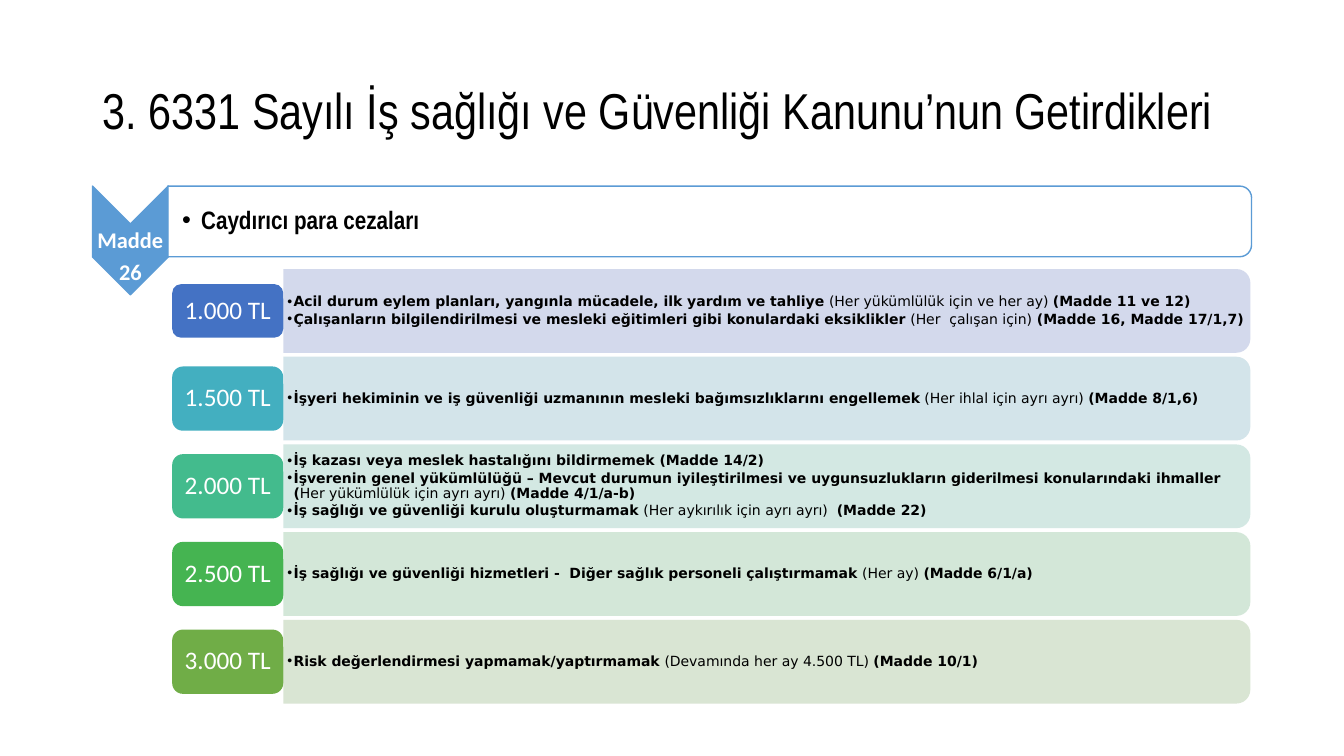
import pptx
import pptx.util
import pptx.dml.color
import pptx.enum.shapes
import pptx.enum.text
import pptx.oxml.ns
import lxml.etree

Cm, Pt = pptx.util.Cm, pptx.util.Pt
RGBColor = pptx.dml.color.RGBColor
SHAPE = pptx.enum.shapes.MSO_SHAPE
ALIGN = pptx.enum.text.PP_ALIGN
MIDDLE = pptx.enum.text.MSO_ANCHOR.MIDDLE
qn = pptx.oxml.ns.qn

# Colours
BLACK = RGBColor(0x00, 0x00, 0x00)
WHITE = RGBColor(0xFF, 0xFF, 0xFF)
BLUE = RGBColor(0x5B, 0x9B, 0xD5)
INDIGO, INDIGO_TINT = RGBColor(0x44, 0x72, 0xC4), RGBColor(0xCF, 0xD5, 0xEA)
TEAL, TEAL_TINT = RGBColor(0x43, 0xAF, 0xC0), RGBColor(0xCF, 0xE2, 0xE8)
MINT, MINT_TINT = RGBColor(0x43, 0xBB, 0x8D), RGBColor(0xCF, 0xE6, 0xE0)
GREEN, GREEN_TINT = RGBColor(0x45, 0xB4, 0x51), RGBColor(0xCF, 0xE5, 0xD4)
OLIVE, OLIVE_TINT = RGBColor(0x70, 0xAD, 0x47), RGBColor(0xD5, 0xE3, 0xCF)

# Content
TITLE = "3. 6331 Sayılı İş sağlığı ve Güvenliği Kanunu’nun Getirdikleri"
ARTICLE = ["Madde", "26"]
HEADING = "Caydırıcı para cezaları"

# Fine, chip colour, bar colour, chip height in cm, bullets;
# the runs of a bullet alternate between bold and regular
FINES = [
    ("1.000 TL", INDIGO, INDIGO_TINT, 1.35, [
        ["Acil durum eylem planları, yangınla mücadele, ilk yardım ve tahliye ",
         "(Her yükümlülük için ve her ay) ", "(Madde 11 ve 12)"],
        ["Çalışanların bilgilendirilmesi ve mesleki eğitimleri gibi konulardaki eksiklikler ",
         "(Her  çalışan için)", " (Madde 16, Madde 17/1,7)"]]),
    ("1.500 TL", TEAL, TEAL_TINT, 1.62, [
        ["İşyeri hekiminin ve iş güvenliği uzmanının mesleki bağımsızlıklarını engellemek",
         " (Her ihlal için ayrı ayrı) ", "(Madde 8/1,6)"]]),
    ("2.000 TL", MINT, MINT_TINT, 1.62, [
        ["İş kazası veya meslek hastalığını bildirmemek (Madde 14/2)"],
        ["İşverenin genel yükümlülüğü – Mevcut durumun iyileştirilmesi ve "
         "uygunsuzlukların giderilmesi konularındaki ihmaller (",
         "Her yükümlülük için ayrı ayrı) ", "(Madde 4/1/a-b)"],
        ["İş sağlığı ve güvenliği kurulu oluşturmamak ",
         "(Her aykırılık için ayrı ayrı)  ", "(Madde 22)"]]),
    ("2.500 TL", GREEN, GREEN_TINT, 1.62, [
        ["İş sağlığı ve güvenliği hizmetleri -  Diğer sağlık personeli çalıştırmamak ",
         "(Her ay) ", "(Madde 6/1/a)"]]),
    ("3.000 TL", OLIVE, OLIVE_TINT, 1.62, [
        ["Risk değerlendirmesi yapmamak/yaptırmamak ",
         "(Devamında her ay 4.500 TL) ", "(Madde 10/1)"]]),
]

# Layout in cm
ROW_TOP, ROW_PITCH, ROW_H = 6.78, 2.21, 2.11
CHIP_X, CHIP_W = 4.34, 2.8
BAR_X, BAR_W = CHIP_X + CHIP_W, 24.37
HEAD_X, HEAD_Y, HEAD_W, HEAD_H = 4.23, 4.69, 27.31, 1.78


def add_shape(kind, x, y, w, h, fill, line=None, quarter_turn=False, alpha=None):
    """Place a shape so that it shows at x, y, w, h, even when turned by 90°."""
    if quarter_turn:
        x, y, w, h = x + (w - h) / 2, y + (h - w) / 2, h, w
    sp = slide.shapes.add_shape(kind, Cm(x), Cm(y), Cm(w), Cm(h))
    sp.rotation = 90 if quarter_turn else 0
    sp.shadow.inherit = False
    sp.fill.solid()
    sp.fill.fore_color.rgb = fill
    if alpha:
        colour = sp.fill._xPr.find(qn("a:solidFill"))[0]
        lxml.etree.SubElement(colour, qn("a:alpha")).set("val", str(alpha * 1000))
    if line is None:
        sp.line.fill.background()
    else:
        sp.line.color.rgb = line
        sp.line.width = Pt(1)
    return sp


def set_frame(sp, side=0.0, edge=0.0):
    tf = sp.text_frame
    tf.word_wrap = True
    tf.vertical_anchor = MIDDLE
    tf.margin_left = tf.margin_right = Cm(side)
    tf.margin_top = tf.margin_bottom = Cm(edge)
    return tf


def add_text_box(x, y, w, h, side=0.0, edge=0.0):
    return set_frame(slide.shapes.add_textbox(Cm(x), Cm(y), Cm(w), Cm(h)), side, edge)


def add_paragraph(tf, first, runs, size, font, color, align=ALIGN.LEFT, bold=False):
    p = tf.paragraphs[0] if first else tf.add_paragraph()
    p.alignment = align
    p.line_spacing = 0.9
    for i, text in enumerate(runs):
        r = p.add_run()
        r.text = text
        r.font.size, r.font.name = Pt(size), font
        r.font.bold = bold and i % 2 == 0
        r.font.color.rgb = color
    return p


def add_bullet(p, indent):
    pPr = p._p.get_or_add_pPr()
    pPr.set("marL", str(Cm(indent)))
    pPr.set("indent", str(-Cm(indent)))
    lxml.etree.SubElement(pPr, qn("a:buFont")).set("typeface", "Arial")
    lxml.etree.SubElement(pPr, qn("a:buChar")).set("char", "•")


prs = pptx.Presentation()
prs.slide_width, prs.slide_height = Cm(33.87), Cm(19.05)
slide = prs.slides.add_slide(prs.slide_layouts[5])

# Title
title = slide.shapes.title
title.left, title.top, title.width, title.height = Cm(2.34), Cm(1.02), Cm(29.21), Cm(3.68)
add_paragraph(set_frame(title, 0.25, 0.13), True, [TITLE], 36, "Arial Narrow", BLACK)

# Article marker
add_shape(SHAPE.CHEVRON, 2.33, 4.69, 1.91, 2.74, BLUE, BLUE, quarter_turn=True)
tf = add_text_box(2.33, 5.9, 1.91, 1.15)
for i, word in enumerate(ARTICLE):
    p = add_paragraph(tf, i == 0, [word], 16, "Calibri", WHITE, ALIGN.CENTER, True)
    p.space_before = Pt(5.6 * i)

# Heading bar
add_shape(SHAPE.ROUND_2_SAME_RECTANGLE, HEAD_X, HEAD_Y, HEAD_W, HEAD_H, WHITE, BLUE,
          quarter_turn=True, alpha=90)
tf = add_text_box(HEAD_X, HEAD_Y, HEAD_W, HEAD_H, side=0.36)
p = add_paragraph(tf, True, [HEADING], 18, "Arial Narrow", BLACK, bold=True)
add_bullet(p, 0.48)

# Fine rows: tinted bar with bullets, chip with the amount
for row, (amount, chip_color, bar_color, chip_h, bullets) in enumerate(FINES):
    y = ROW_TOP + row * ROW_PITCH
    add_shape(SHAPE.ROUND_2_SAME_RECTANGLE, BAR_X, y, BAR_W, ROW_H, bar_color,
              quarter_turn=True, alpha=90)
    tf = add_text_box(BAR_X, y, BAR_W, ROW_H, side=0.1, edge=0.05)
    for i, runs in enumerate(bullets):
        p = add_paragraph(tf, i == 0, runs, 10, "DejaVu Sans", BLACK, bold=True)
        p.space_after = Pt(1.5)
        add_bullet(p, 0.16)
    chip = add_shape(SHAPE.ROUNDED_RECTANGLE, CHIP_X, y + (ROW_H - chip_h) / 2,
                     CHIP_W, chip_h, chip_color)
    add_paragraph(set_frame(chip), True, [amount], 18, "Calibri", WHITE, ALIGN.CENTER)

prs.save("out.pptx")
